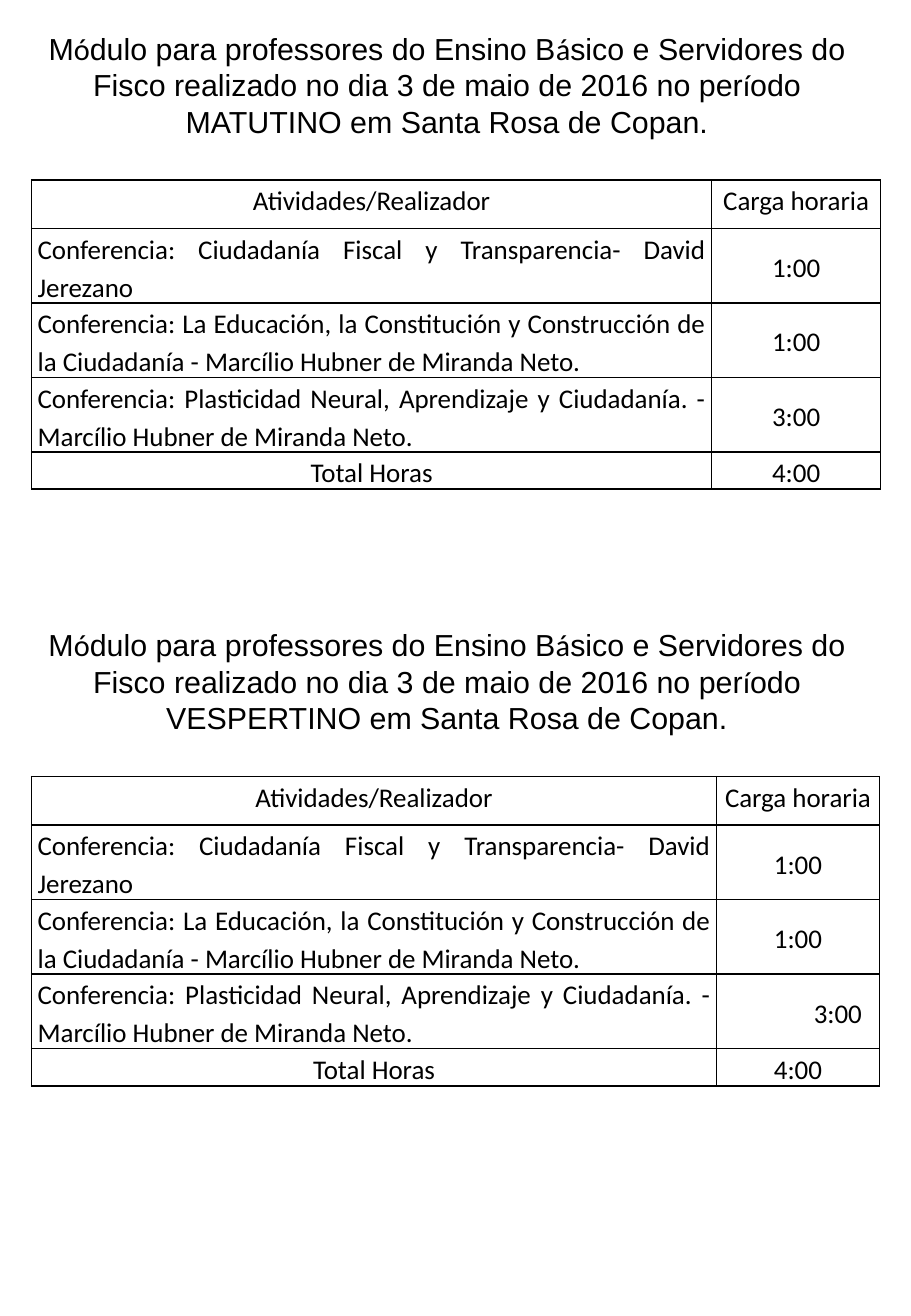
from lxml.etree import SubElement
from pptx import Presentation
from pptx.dml.color import RGBColor
from pptx.enum.text import MSO_ANCHOR, MSO_AUTO_SIZE, PP_ALIGN
from pptx.oxml.ns import qn
from pptx.util import Inches, Pt

COLORS = {"text": "000000", "border": "000000"}
BLACK = RGBColor.from_string(COLORS["text"])
LEFT = Inches(0.26)
ROW_HEIGHTS = [0.4, 0.61, 0.61, 0.61, 0.3]
ROWS = [
    ("Atividades/Realizador", "Carga horaria"),
    ("Conferencia: Ciudadanía Fiscal y Transparencia- David Jerezano", "1:00"),
    ("Conferencia: La Educación, la Constitución y Construcción de la Ciudadanía"
     " - Marcílio Hubner de Miranda Neto.", "1:00"),
    ("Conferencia: Plasticidad Neural, Aprendizaje y Ciudadanía."
     " - Marcílio Hubner de Miranda Neto.", "3:00"),
    ("Total Horas", "4:00"),
]
# period, heading top, table top, column widths
MODULES = [
    ("MATUTINO", 0.19, 1.48, (5.6, 1.39)),
    ("VESPERTINO", 5.1, 6.39, (5.64, 1.34)),
]


def add_borders(cell):
    tc_pr = cell._tc.get_or_add_tcPr()
    for side in ("a:lnL", "a:lnR", "a:lnT", "a:lnB"):
        ln = SubElement(tc_pr, qn(side), w=str(Pt(1)))
        fill = SubElement(ln, qn("a:solidFill"))
        SubElement(fill, qn("a:srgbClr"), val=COLORS["border"])


prs = Presentation()
prs.slide_width, prs.slide_height = Inches(7.5), Inches(10.83)
s = prs.slides.add_slide(prs.slide_layouts[5])

for i, (period, heading_top, table_top, widths) in enumerate(MODULES):
    # Heading: the first is the slide title; accented letters are in Calibri
    box = (LEFT, Inches(heading_top), Inches(6.84), Inches(1.01))
    if i == 0:
        sp = s.shapes.title
        sp.left, sp.top, sp.width, sp.height = box
    else:
        sp = s.shapes.add_textbox(*box)
    tf = sp.text_frame
    tf.word_wrap = True
    tf.auto_size = MSO_AUTO_SIZE.SHAPE_TO_FIT_TEXT
    tf.vertical_anchor = MSO_ANCHOR.MIDDLE
    p = tf.paragraphs[0]
    p.alignment = PP_ALIGN.CENTER
    p.font.size = Pt(18)
    p.font.color.rgb = BLACK
    for text, font in [
        ("M", "Arial"), ("ó", "Calibri"),
        ("dulo para professores do Ensino B", "Arial"), ("á", "Calibri"),
        ("sico e Servidores do Fisco realizado no dia 3 de maio de 2016 no per", "Arial"),
        ("í", "Calibri"), (f"odo {period} em Santa Rosa de Copan.", "Arial"),
    ]:
        r = p.add_run()
        r.text = text
        r.font.name = font

    # Table of activities and hours
    table = s.shapes.add_table(
        len(ROWS), 2, LEFT, Inches(table_top),
        Inches(sum(widths)), Inches(sum(ROW_HEIGHTS))).table
    table.first_row = table.horz_banding = False
    for column, width in zip(table.columns, widths):
        column.width = Inches(width)
    for row, height, texts in zip(table.rows, ROW_HEIGHTS, ROWS):
        row.height = Inches(height)
        for col, (cell, text) in enumerate(zip(row.cells, texts)):
            add_borders(cell)
            cell.fill.background()
            cell.margin_left = cell.margin_right = Inches(0.05)
            cell.margin_top = cell.margin_bottom = 0
            if col == 1 and texts != ROWS[0]:
                cell.vertical_anchor = MSO_ANCHOR.MIDDLE
            p = cell.text_frame.paragraphs[0]
            p.text = text
            p.line_spacing = 1.15
            p.alignment = PP_ALIGN.JUSTIFY if text.startswith("Conferencia") else PP_ALIGN.CENTER
            p.font.name = "Calibri"
            p.font.size = Pt(16)
            p.font.color.rgb = BLACK

# The three-hour entry of the second table is indented from the left
cell = table.cell(3, 1)
cell.margin_left = Inches(0.8)
cell.text_frame.paragraphs[0].alignment = PP_ALIGN.LEFT

prs.save("out.pptx")
